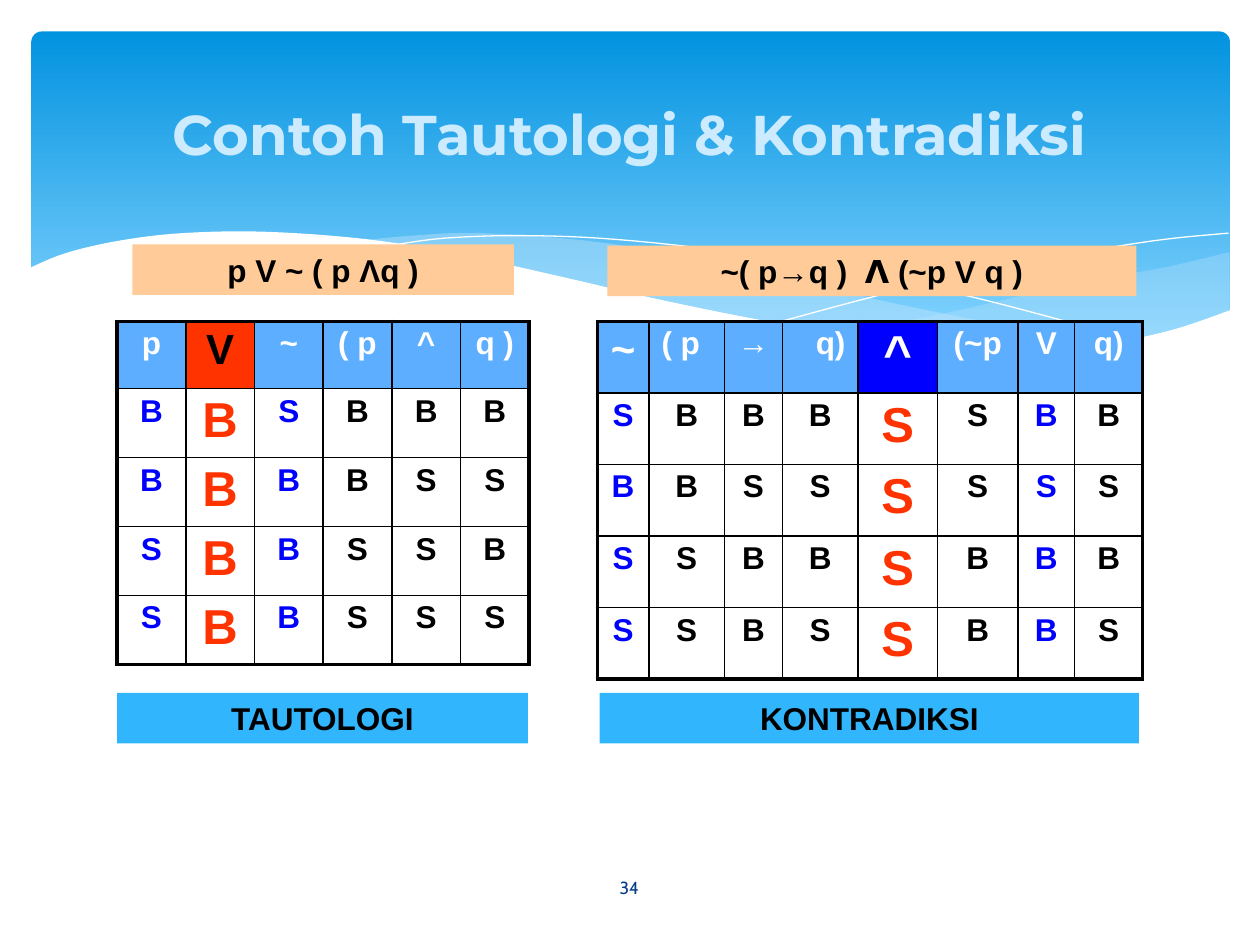
from lxml import etree
from pptx import Presentation
from pptx import util as u
from pptx.dml.color import RGBColor
from pptx.enum import shapes, text
from pptx.oxml.ns import qn

INK = {
    "sky": "0293E0", "pale": "83D3FE", "mist": "C6E7FC", "white": "FFFFFF",
    "title": "CDEBFF", "navy": "073E87", "head": "5EAEFF", "red": "FF3300",
    "blue": "0000FF", "black": "000000", "peach": "FFCC99", "label": "31B6FD",
}
COLS, ROWS = 100, 75
MID, LEFT, RIGHT = text.PP_ALIGN.CENTER, text.PP_ALIGN.LEFT, text.PP_ALIGN.RIGHT


def curve(knots, steps=6):
    """Points of a smooth curve that passes through all knots."""
    ends = [knots[0], *knots, knots[-1]]
    points = [knots[0]]
    for a, b, c, d in zip(ends, ends[1:], ends[2:], ends[3:]):
        for step in range(1, steps + 1):
            t = step / steps
            points.append(tuple(
                (2 * q + (r - p) * t + (2 * p - 5 * q + 4 * r - s) * t ** 2
                 + (3 * q - p - 3 * r + s) * t ** 3) / 2
                for p, q, r, s in zip(a, b, c, d)))
    return points


class Deck:
    """Style and current slide; lengths are columns and rows of the grid."""

    def __init__(self):
        self.prs = Presentation()
        self.prs.slide_width, self.prs.slide_height = u.Inches(10), u.Inches(7.5)
        self.col = self.prs.slide_width / COLS
        self.row = self.prs.slide_height / ROWS
        self.slide = self.prs.slides.add_slide(self.prs.slide_layouts[6])

    def ink(self, name):
        return RGBColor.from_string(INK[name])

    def box(self, x, y, w, h):
        return (round(x * self.col), round(y * self.row),
                round(w * self.col), round(h * self.row))

    def paint(self, fill, name):
        fill.solid()
        fill.fore_color.rgb = self.ink(name)

    def letter(self, frame, runs, size, ink, face="Arial", bold=True, align=MID):
        """One paragraph; runs are (words, face) pairs or a plain string."""
        par = frame.paragraphs[0]
        par.alignment = align
        font = par.font
        font.size, font.bold = u.Pt(size), bold
        font.color.rgb = self.ink(ink)
        if isinstance(runs, str):
            font.name = face
            par.add_run().text = runs
            return
        for words, name in runs:
            run = par.add_run()
            run.text, run.font.name = words, name

    def words(self, at, words, **style):
        frame = self.slide.shapes.add_textbox(*self.box(*at)).text_frame
        frame.word_wrap = True
        frame.vertical_anchor = text.MSO_ANCHOR.MIDDLE
        self.letter(frame, words, **style)

    def label(self, at, runs, fill):
        shape = self.slide.shapes.add_shape(
            shapes.MSO_SHAPE.RECTANGLE, *self.box(*at))
        shape.shadow.inherit = False
        self.paint(shape.fill, fill)
        shape.line.fill.background()
        shape.text_frame.vertical_anchor = text.MSO_ANCHOR.MIDDLE
        self.letter(shape.text_frame, runs, 18, "black")

    def banner(self, at, top, base):
        shape = self.slide.shapes.add_shape(
            shapes.MSO_SHAPE.ROUNDED_RECTANGLE, *self.box(*at))
        shape.adjustments[0] = 0.03
        shape.shadow.inherit = False
        shape.line.fill.background()
        shape.fill.gradient()
        shape.fill.gradient_angle = 270
        for stop, name, place in zip(shape.fill.gradient_stops, (top, base), (0, 0.9)):
            stop.color.rgb, stop.position = self.ink(name), place

    def wave(self, *edges, fill=None, alpha=100):
        """Curved edges joined into a filled area, or one thin white line."""
        points = [(round(x * self.col), round(y * self.row))
                  for edge in edges for x, y in curve(edge)]
        outline = self.slide.shapes.build_freeform(*points[0], scale=1.0)
        outline.add_line_segments(points[1:], close=bool(fill))
        shape = outline.convert_to_shape()
        shape.shadow.inherit = False
        if not fill:
            shape.fill.background()
            shape.line.color.rgb = self.ink("white")
            shape.line.width = u.Pt(0)
            return
        self.paint(shape.fill, fill)
        shape.line.fill.background()
        if alpha < 100:
            hue = shape._element.find(".//" + qn("a:srgbClr"))
            etree.SubElement(hue, qn("a:alpha"), val=str(alpha * 1000))

    def edge(self, cell, side, width):
        line = etree.SubElement(cell._tc.get_or_add_tcPr(), qn("a:ln" + side),
                                w=str(u.Pt(width)))
        fill = etree.SubElement(line, qn("a:solidFill"))
        etree.SubElement(fill, qn("a:srgbClr"), val=INK["black"])

    def table(self, x, y, widths, high, heads, body, key, blues, mark):
        """Truth table; key is the result column, mark its head style."""
        last, end = len(body), len(widths) - 1
        grid = self.slide.shapes.add_table(
            last + 1, end + 1,
            *self.box(x, y, sum(widths), high * (last + 1))).table
        grid.first_row = grid.horz_banding = False
        for column, width in zip(grid.columns, widths):
            column.width = round(width * self.col)
        for r, line in enumerate([heads, *body]):
            for c, item in enumerate(line):
                cell = grid.cell(r, c)
                cell.margin_top = cell.margin_bottom = u.Inches(0.04)
                for side, outer in zip("LRTB", (c == 0, c == end, r == 0, r == last)):
                    self.edge(cell, side, 2.25 if outer else 1)
                size, ink, fill, align = 18, "black", None, MID
                if r == 0:
                    item, size, align = item
                    ink, fill = mark if c == key else ("white", "head")
                elif c == key:
                    size, ink = 28, "red"
                elif c in blues:
                    ink = "blue"
                if fill:
                    self.paint(cell.fill, fill)
                else:
                    cell.fill.background()
                self.letter(cell.text_frame, item, size, ink, align=align)


def main():
    deck = Deck()

    # Banner with waves
    deck.banner((2.5, 2.5, 95.1, 27), "sky", "pale")
    deck.wave([(97.6, 20), (92.1, 21.3), (86.1, 22.3), (75.3, 24.8), (66.1, 26.5)],
              [(66.1, 26.5), (73.2, 27.4), (80.3, 27.8), (87.2, 27.4),
               (92.8, 26.3), (97.6, 24.7)], fill="mist", alpha=29)
    deck.wave([(89.3, 27.3), (80.7, 26), (70.6, 24), (62.9, 22.2), (54.1, 20.3),
               (46.5, 19.1), (38, 18.5), (32.8, 18.7), (28.6, 19.1)],
              [(28.6, 19.1), (36.2, 20.3), (44.9, 22.2), (56.6, 24.8), (66.5, 26.6),
               (74.8, 27.6), (81.8, 27.8), (89.3, 27.3)], fill="mist", alpha=40)
    deck.wave([(30.9, 19.5), (35.3, 18.9), (41.6, 18.7), (48.9, 19), (58.2, 20),
               (66.5, 21.3), (76, 23.3), (83.1, 25.1), (90.7, 27.2)])
    deck.wave([(61.3, 25.7), (69.5, 23.5), (77.6, 21.6), (86.6, 19.9),
               (92.4, 19), (97.5, 18.5)])
    deck.wave([(97.7, 24.6), (93, 26.2), (87.5, 27.3), (80.9, 27.7), (72.6, 27.2),
               (62.6, 25.8), (52.9, 23.9), (44.7, 22), (36.5, 20.2), (29.2, 19),
               (21.1, 18.4), (14.6, 18.5), (9.5, 19.1), (5.2, 20.1), (2.3, 21.3)],
              [(2.3, 32.9), (97.7, 32.9)], fill="white")

    # Title and page number
    deck.words((43.6, 68.4, 12.7, 4), "34", size=10, ink="navy",
               face="Cabin", bold=False)
    deck.words((5, 3.7, 90, 13.7), "Contoh Tautologi & Kontradiksi",
               size=32, ink="title", face="Montserrat")

    # Tautology
    deck.label((10.5, 19.4, 30.3, 4), "p V ~ ( p Λq )", "peach")
    deck.table(9.3, 25.5, [5.45] * 6, 5.35,
               [("p", 18, MID), ("V", 24, MID), ("~", 18, MID),
                ("( p", 18, MID), ("^", 18, MID), ("q )", 18, MID)],
               ["BBSBBB", "BBBBSS", "SBBSSB", "SBBSSS"],
               key=1, blues=(0, 2), mark=("black", "red"))
    deck.label((9.3, 55, 32.6, 4), "TAUTOLOGI", "label")

    # Contradiction
    deck.label((48.2, 19.5, 42, 4),
               [("~( p→q )  ", "Arial"), ("Λ", "DejaVu Sans"),
                (" (~p V q )", "Arial")], "peach")
    deck.table(47.4, 25.5, [4.1, 6, 4.6, 6, 6.3, 6.4, 4.5, 5.4], 5.68,
               [("~", 24, MID), ("( p", 18, LEFT), ("→", 18, MID),
                ("q)", 18, RIGHT), ("^", 28, MID), ("(~p", 18, MID),
                ("V", 18, MID), ("q)", 18, MID)],
               ["SBBBSSBB", "BBSSSSSS", "SSBBSBBB", "SSBSSBBS"],
               key=4, blues=(0, 6), mark=("white", "blue"))
    deck.label((47.6, 55, 42.8, 4), "KONTRADIKSI", "label")

    deck.prs.save("out.pptx")


if __name__ == "__main__":
    main()
